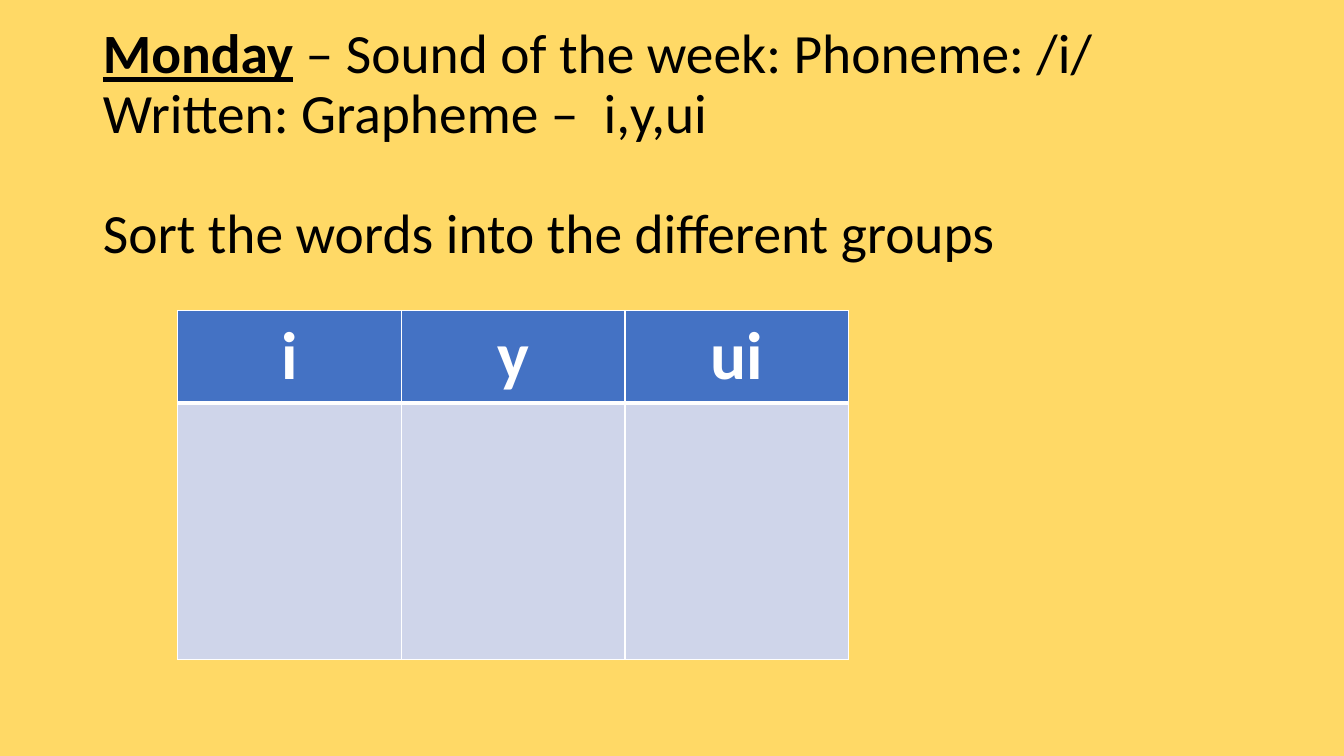
from lxml import etree
from pptx import Presentation
from pptx.dml.color import RGBColor
from pptx.enum import text
from pptx.oxml import ns
from pptx.util import Inches, Pt

YELLOW = RGBColor(0xFF, 0xD9, 0x66)
BLUE = RGBColor(0x44, 0x72, 0xC4)
PALE_BLUE = RGBColor(0xCF, 0xD5, 0xEA)
WHITE = RGBColor(0xFF, 0xFF, 0xFF)
BLACK = RGBColor(0, 0, 0)
FONT = "Calibri"
GRAPHEMES = ["i", "y", "ui"]


def style_font(font, size, color, bold):
    font.name = FONT
    font.size = Pt(size)
    font.color.rgb = color
    font.bold = bold


def add_title(slide):
    title = slide.shapes.title
    title.left, title.top = Inches(0.92), Inches(0.72)
    title.width, title.height = Inches(11.5), Inches(1.45)
    tf = title.text_frame
    tf.word_wrap = True
    tf.auto_size = text.MSO_AUTO_SIZE.NONE
    tf.vertical_anchor = text.MSO_ANCHOR.MIDDLE
    tf.text = "\n".join([
        "",
        "Written: Grapheme –  i,y,ui",
        "Sort the words into the different groups",
    ])
    heading, _, task = tf.paragraphs
    day = heading.add_run()
    day.text = "Monday"
    day.font.bold = day.font.underline = True
    heading.add_run().text = " – Sound of the week: Phoneme: /i/"
    for p in tf.paragraphs:
        p.alignment = text.PP_ALIGN.LEFT
        p.line_spacing = 0.9
        style_font(p.font, 39.6, BLACK, False)
    task.space_before = Pt(43)


def set_borders(cell, top, bottom):
    """Draw white cell edges; top and bottom are widths in points."""
    tc_pr = cell._tc.get_or_add_tcPr()
    for side, width in (("L", 1), ("R", 1), ("T", top), ("B", bottom)):
        ln = etree.SubElement(tc_pr, ns.qn(f"a:ln{side}"), w=str(Pt(width)))
        fill = etree.SubElement(ln, ns.qn("a:solidFill"))
        etree.SubElement(fill, ns.qn("a:srgbClr"), val=str(WHITE))


def fill_cell(cell, color):
    cell.fill.solid()
    cell.fill.fore_color.rgb = color


def add_sorting_table(slide):
    table = slide.shapes.add_table(
        2, len(GRAPHEMES), Inches(1.76), Inches(3.08), Inches(6.66), Inches(3.46)
    ).table
    table.rows[0].height = Inches(0.92)
    table.rows[1].height = Inches(2.54)
    for col, grapheme in enumerate(GRAPHEMES):
        table.columns[col].width = Inches(2.22)
        header, body = table.cell(0, col), table.cell(1, col)
        set_borders(header, 1, 3)
        set_borders(body, 3, 1)
        fill_cell(header, BLUE)
        fill_cell(body, PALE_BLUE)
        header.text = grapheme
        p = header.text_frame.paragraphs[0]
        p.alignment = text.PP_ALIGN.CENTER
        style_font(p.font, 48, WHITE, True)


def main():
    prs = Presentation()
    prs.slide_width, prs.slide_height = Inches(13.33), Inches(7.5)
    slide = prs.slides.add_slide(prs.slide_layouts[5])
    slide.background.fill.solid()
    slide.background.fill.fore_color.rgb = YELLOW
    add_title(slide)
    add_sorting_table(slide)
    prs.save("out.pptx")


if __name__ == "__main__":
    main()
